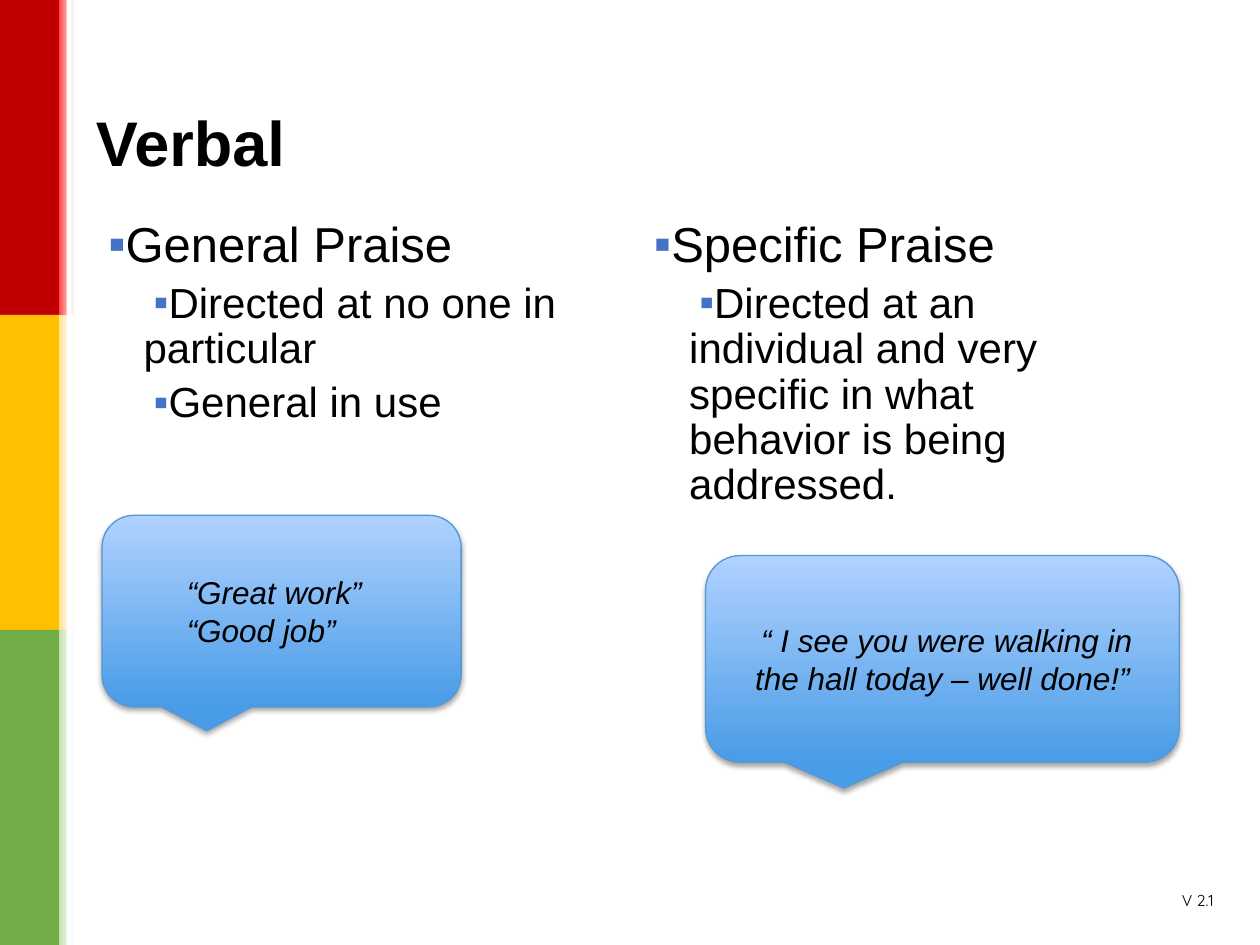
from dataclasses import dataclass

from lxml import etree
from pptx import Presentation
from pptx.dml.color import RGBColor
from pptx.enum.shapes import MSO_SHAPE
from pptx.enum.text import MSO_ANCHOR, MSO_AUTO_SIZE, PP_ALIGN
from pptx.oxml.ns import qn
from pptx.util import Inches, Pt

RECTANGLE = MSO_SHAPE.RECTANGLE
CALLOUT = MSO_SHAPE.ROUNDED_RECTANGULAR_CALLOUT
LEFT, CENTER = PP_ALIGN.LEFT, PP_ALIGN.CENTER
MIDDLE, TOP = MSO_ANCHOR.MIDDLE, MSO_ANCHOR.TOP
TWO_CONTENT_LAYOUT = 3


@dataclass(frozen=True)
class Theme:
    font: str = "Arial"
    version_font: str = "Quicksand"
    text: str = "000000"
    white: str = "FFFFFF"
    bullet: str = "4472C4"
    callout_bottom: str = "499CE7"
    callout_top: str = "B0D2FF"
    callout_line: str = "5698D3"
    title_size: int = 36
    heading_size: int = 28
    detail_size: int = 24
    quote_size: int = 18
    version_size: int = 9


THEME = Theme()

# Content
TITLE = "Verbal"
VERSION = "V 2.1"
BANDS = [("C00000", "FF4747"), ("FFC000", "FEE599"), ("70AD47", "C4E0B2")]
COLUMNS = [
    {"box": (0.5, 1.68, 4, 2), "heading": "General Praise",
     "details": ["Directed at no one in particular", "General in use"]},
    {"box": (4.83, 1.68, 4, 2.73), "heading": "Specific Praise",
     "details": ["Directed at an individual and very specific in what "
                 "behavior is being addressed."]},
]
CALLOUTS = [
    {"box": (5.6, 4.41, 3.76, 1.64), "align": CENTER, "level": 0, "indent": 0,
     "quotes": [" “ I see you were walking in the hall today – well done!”"]},
    {"box": (0.81, 4.09, 2.85, 1.52), "align": LEFT, "level": 1, "indent": 0.5,
     "quotes": ["“Great work”", "“Good job”"]},
]

# Layout
SLIDE_WIDTH, SLIDE_HEIGHT = 10, 7.5
BAND_WIDTH, FADE_WIDTH = 0.47, 0.12
BAND_HEIGHT = SLIDE_HEIGHT / len(BANDS)
MARGIN = 0.07


def color(value):
    return RGBColor.from_string(value)


def style_font(paragraph, size, name=THEME.font, bold=False, italic=False):
    font = paragraph.font
    font.name, font.size = name, Pt(size)
    font.bold, font.italic = bold, italic
    font.color.rgb = color(THEME.text)


def fill_gradient(shape, start, end, angle):
    shape.fill.gradient()
    shape.fill.gradient_angle = angle
    for stop, value in zip(shape.fill.gradient_stops, (start, end)):
        stop.color.rgb = color(value)


def add_shape(slide, kind, box):
    shape = slide.shapes.add_shape(kind, *map(Inches, box))
    shape.shadow.inherit = False
    shape.line.fill.background()
    return shape


def add_rectangle(slide, box, fill):
    shape = add_shape(slide, RECTANGLE, box)
    shape.fill.solid()
    shape.fill.fore_color.rgb = color(fill)


def place(shape, box):
    shape.left, shape.top, shape.width, shape.height = map(Inches, box)


def set_frame(frame, anchor, horizontal=MARGIN, vertical=MARGIN):
    frame.word_wrap = True
    frame.auto_size = MSO_AUTO_SIZE.NONE
    frame.vertical_anchor = anchor
    frame.margin_left = frame.margin_right = Inches(horizontal)
    frame.margin_top = frame.margin_bottom = Inches(vertical)


def write_paragraphs(frame, texts):
    frame.text = "\n".join(texts)
    return frame.paragraphs


def set_indent(paragraph, left, first_line=0):
    properties = paragraph._p.get_or_add_pPr()
    properties.set("marL", str(Inches(left)))
    properties.set("indent", str(Inches(first_line)))
    return properties


def add_bullet(paragraph, left, first_line):
    properties = set_indent(paragraph, left, first_line)
    bullet_color = etree.SubElement(properties, qn("a:buClr"))
    etree.SubElement(bullet_color, qn("a:srgbClr"), val=THEME.bullet)
    etree.SubElement(properties, qn("a:buFont"), typeface=THEME.font)
    etree.SubElement(properties, qn("a:buChar"), char="▪")


def add_soft_shadow(shape):
    effects = shape._element.spPr.find(qn("a:effectLst"))
    shadow = etree.SubElement(
        effects, qn("a:outerShdw"), blurRad=str(Pt(3.1)), dist=str(Pt(1.8)),
        dir="5400000", rotWithShape="0")
    shade = etree.SubElement(shadow, qn("a:srgbClr"), val="000000")
    etree.SubElement(shade, qn("a:alpha"), val="35000")


def add_side_bands(slide):
    for index, (solid, fade) in enumerate(BANDS):
        top = index * BAND_HEIGHT
        add_rectangle(slide, (0, top, BAND_WIDTH, BAND_HEIGHT), solid)
        strip = add_shape(slide, RECTANGLE, (BAND_WIDTH, top, FADE_WIDTH, BAND_HEIGHT))
        fill_gradient(strip, fade, THEME.white, 0)
    add_rectangle(slide, (0.53, 0, 0.04, SLIDE_HEIGHT), THEME.white)


def add_version(slide):
    box = slide.shapes.add_textbox(*map(Inches, (9.31, 7.03, 0.69, 0.3)))
    set_frame(box.text_frame, TOP, vertical=0.04)
    paragraph = write_paragraphs(box.text_frame, [VERSION])[0]
    style_font(paragraph, THEME.version_size, THEME.version_font)


def add_callout(slide, callout):
    shape = add_shape(slide, CALLOUT, callout["box"])
    fill_gradient(shape, THEME.callout_bottom, THEME.callout_top, 90)
    shape.line.color.rgb = color(THEME.callout_line)
    shape.line.width = Pt(0.75)
    add_soft_shadow(shape)
    set_frame(shape.text_frame, MIDDLE, 0.1, 0.05)
    for paragraph in write_paragraphs(shape.text_frame, callout["quotes"]):
        paragraph.alignment = callout["align"]
        paragraph.level = callout["level"]
        set_indent(paragraph, callout["indent"])
        style_font(paragraph, THEME.quote_size, italic=True)


def fill_title(title):
    place(title, (0.69, 0.4, 8.62, 1.45))
    set_frame(title.text_frame, MIDDLE)
    paragraph = write_paragraphs(title.text_frame, [TITLE])[0]
    paragraph.alignment = LEFT
    style_font(paragraph, THEME.title_size, bold=True)


def fill_column(body, column):
    place(body, column["box"])
    set_frame(body.text_frame, TOP)
    texts = [column["heading"], *column["details"]]
    for index, paragraph in enumerate(write_paragraphs(body.text_frame, texts)):
        is_detail = index > 0
        paragraph.level = int(is_detail)
        paragraph.line_spacing = 0.9
        paragraph.space_before = Pt(5 if is_detail else 0)
        add_bullet(paragraph, *((0.57, 0.08) if is_detail else (0.19, 0.1)))
        style_font(paragraph, THEME.detail_size if is_detail else THEME.heading_size)


def main():
    presentation = Presentation()
    presentation.slide_width = Inches(SLIDE_WIDTH)
    presentation.slide_height = Inches(SLIDE_HEIGHT)
    slide = presentation.slides.add_slide(presentation.slide_layouts[TWO_CONTENT_LAYOUT])
    add_side_bands(slide)
    add_version(slide)
    for callout in CALLOUTS:
        add_callout(slide, callout)
    fill_title(slide.shapes.title)
    for index, column in enumerate(COLUMNS, start=1):
        fill_column(slide.placeholders[index], column)
    presentation.save("out.pptx")


if __name__ == "__main__":
    main()
